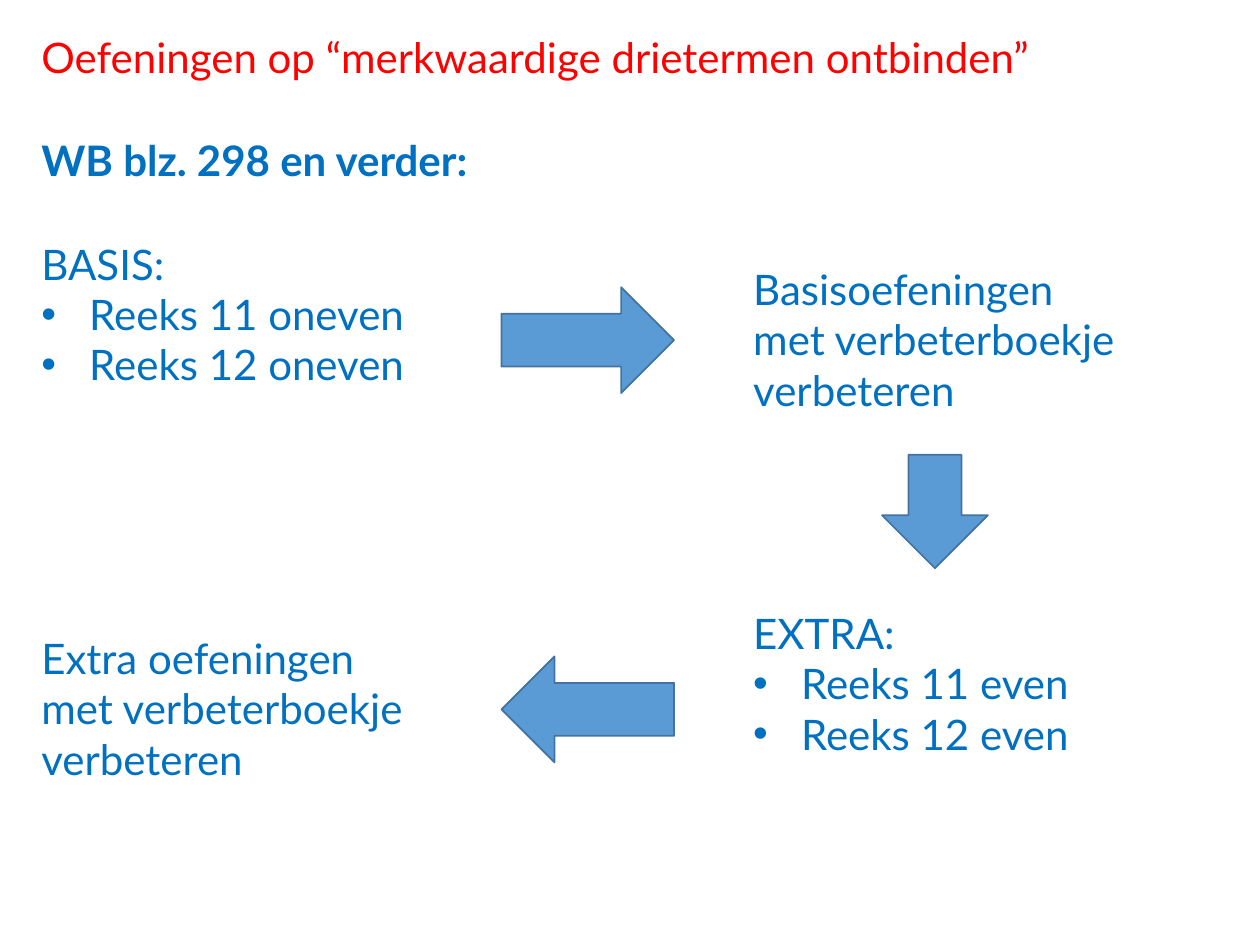
"""Build the exercise slide with four steps joined by arrows."""
from dataclasses import dataclass

from lxml import etree
from pptx import Presentation
from pptx.dml.color import RGBColor
from pptx.enum.shapes import MSO_SHAPE
from pptx.enum.text import MSO_AUTO_SIZE
from pptx.oxml.ns import qn
from pptx.util import Inches, Pt

ARROW = MSO_SHAPE.RIGHT_ARROW
GROW = MSO_AUTO_SIZE.SHAPE_TO_FIT_TEXT
RED, BLUE, FILL, EDGE = "FF0000", "0070C0", "5B9BD5", "43739E"
LEFT, RIGHT, MID = 0.23, 5.88, 3.98
ONE, THREE = 0.5, 1.31
INDENT = Inches(0.38)
FORMAT = {"name": "Lato", "size": Pt(24)}
CHECK = ("met verbeterboekje", "verbeteren")


@dataclass
class Note:
    left: float
    top: float
    width: float
    height: float
    lines: tuple[str, ...]
    color: str = BLUE
    bold: bool = False
    listed: bool = False


@dataclass
class Arrow:
    left: float
    top: float
    width: float
    turn: int = 0


NOTES = [
    Note(LEFT, 0.2, 8.16, ONE,
         ("Oefeningen op “merkwaardige drietermen ontbinden”",), color=RED),
    Note(LEFT, 1.02, 4.04, ONE, ("WB blz. 298 en verder:",), bold=True),
    Note(LEFT, 1.84, 3.11, THREE,
         ("BASIS:", "Reeks 11 oneven", "Reeks 12 oneven"), listed=True),
    Note(RIGHT, 2.04, 3.1, THREE, ("Basisoefeningen", *CHECK)),
    Note(LEFT, 4.97, 3.1, THREE, ("Extra oefeningen", *CHECK)),
    Note(RIGHT, 4.77, 2.74, THREE,
         ("EXTRA:", "Reeks 11 even", "Reeks 12 even"), listed=True),
]
ARROWS = [
    Arrow(MID, 2.28, 1.37),
    Arrow(6.97, 3.64, 0.9, 90),
    Arrow(MID, 5.21, 1.37, 180),
]


def paint(target, color: str) -> None:
    """Set a colour format from a hex string."""
    target.rgb = RGBColor.from_string(color)


def add_dot(para) -> None:
    """Give a paragraph a bullet with a hanging indent."""
    props = para._p.get_or_add_pPr()
    props.set("marL", str(INDENT))
    props.set("indent", str(-INDENT))
    etree.SubElement(props, qn("a:buFont")).set("typeface", "Arial")
    etree.SubElement(props, qn("a:buChar")).set("char", "•")


def draw_note(slide, note: Note) -> None:
    """Draw a text box, with bullets below its first line if listed."""
    area = map(Inches, (note.left, note.top, note.width, note.height))
    frame = slide.shapes.add_textbox(*area).text_frame
    frame.word_wrap = False
    frame.auto_size = GROW
    for index, line in enumerate(note.lines):
        para = frame.add_paragraph() if index else frame.paragraphs[0]
        if note.listed and index:
            add_dot(para)
        run = para.add_run()
        run.text = line
        for key, value in {**FORMAT, "bold": note.bold}.items():
            setattr(run.font, key, value)
        paint(run.font.color, note.color)


def draw_arrow(slide, arrow: Arrow) -> None:
    """Draw a block arrow turned to its direction."""
    area = map(Inches, (arrow.left, arrow.top, arrow.width, 0.84))
    shape = slide.shapes.add_shape(ARROW, *area)
    shape.rotation = arrow.turn
    shape.shadow.inherit = False
    shape.fill.solid()
    paint(shape.fill.fore_color, FILL)
    paint(shape.line.color, EDGE)
    shape.line.width = Pt(1)


def main() -> None:
    """Build and save the slide."""
    deck = Presentation()
    deck.slide_width, deck.slide_height = Inches(10), Inches(7.5)
    slide = deck.slides.add_slide(deck.slide_layouts[6])
    for note in NOTES:
        draw_note(slide, note)
    for arrow in ARROWS:
        draw_arrow(slide, arrow)
    deck.save("out.pptx")


if __name__ == "__main__":
    main()
